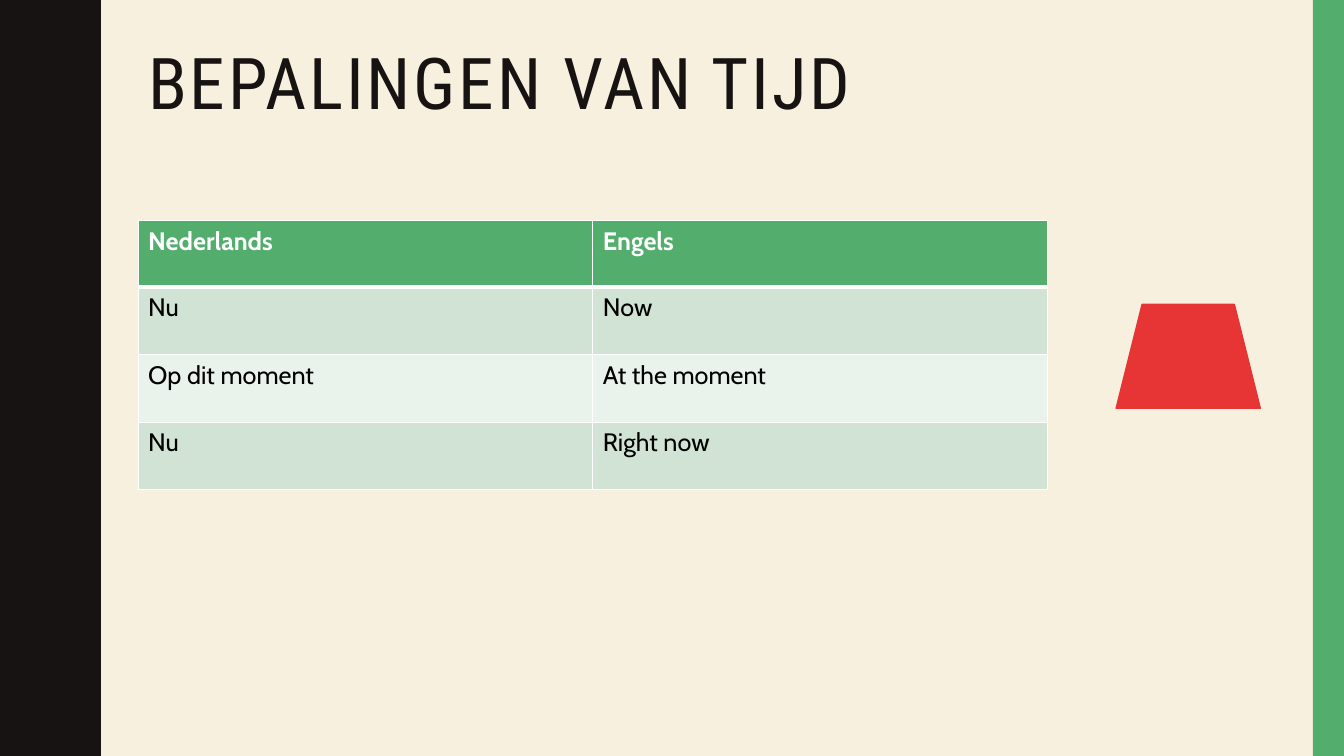
"""Build a slide with a Dutch-English table of time expressions."""
import lxml.etree
import pptx
import pptx.dml.color
import pptx.enum.shapes
import pptx.enum.text
import pptx.oxml.ns
import pptx.util

RGBColor = pptx.dml.color.RGBColor
CREAM = RGBColor(0xF7, 0xF0, 0xDF)
INK = RGBColor(0x17, 0x13, 0x12)
GREEN = RGBColor(0x53, 0xAE, 0x6E)
PALE_GREEN = RGBColor(0xD1, 0xE3, 0xD5)
MIST = RGBColor(0xE9, 0xF2, 0xEB)
RED = RGBColor(0xE7, 0x35, 0x35)
WHITE = RGBColor(0xFF, 0xFF, 0xFF)
BLACK = RGBColor(0, 0, 0)

COLUMNS, ROWS = 13.33, 7.5
UNIT = pptx.util.Inches(1)
WAVE_PERIOD = 1.5
HALF_WAVE = [
    (0.78, 0), (0.78, 0.07), (0.79, 0.14), (0.8, 0.2), (0.81, 0.25),
    (0.83, 0.29), (0.85, 0.33), (0.87, 0.38), (0.89, 0.42), (0.91, 0.46),
    (0.93, 0.5), (0.95, 0.55), (0.96, 0.61), (0.97, 0.68), (0.97, 0.75),
]
WORDS = [
    ("Nederlands", "Engels"),
    ("Nu", "Now"),
    ("Op dit moment", "At the moment"),
    ("Nu", "Right now"),
]
ROW_FILLS = [GREEN, PALE_GREEN, MIST, PALE_GREEN]


def grid(*lengths):
    """Turn grid lengths into slide units."""
    return [round(length * UNIT) for length in lengths]


def write(text_frame, text, *, font, size, color, bold=False, line_spacing=1.0, tracking=0):
    """Write one formatted paragraph."""
    paragraph = text_frame.paragraphs[0]
    paragraph.line_spacing = line_spacing
    paragraph.alignment = pptx.enum.text.PP_ALIGN.LEFT
    run = paragraph.add_run()
    run.text = text
    run.font.name = font
    run.font.size = pptx.util.Pt(size)
    run.font.bold = bold
    run.font.color.rgb = color
    if tracking:
        run.font._element.set("spc", str(tracking * 100))


presentation = pptx.Presentation()
presentation.slide_width, presentation.slide_height = grid(COLUMNS, ROWS)
slide = presentation.slides.add_slide(presentation.slide_layouts[5])
slide.background.fill.solid()
slide.background.fill.fore_color.rgb = CREAM

wave = [(0, 0)]
for period in range(round(ROWS / WAVE_PERIOD)):
    top = period * WAVE_PERIOD
    wave += [(x, top + y) for x, y in HALF_WAVE]
    wave += [(x, top + WAVE_PERIOD - y) for x, y in reversed(HALF_WAVE[:-1])]
wave.append((0, ROWS))
builder = slide.shapes.build_freeform(0, 0, scale=UNIT)
builder.add_line_segments(wave[1:], close=True)
wavy_edge = builder.convert_to_shape()

green_bar = slide.shapes.add_shape(
    pptx.enum.shapes.MSO_SHAPE.RECTANGLE, *grid(COLUMNS - 0.31, 0, 0.31, ROWS))
trapezoid = slide.shapes.add_shape(
    pptx.enum.shapes.MSO_SHAPE.TRAPEZOID, *grid(11.07, 3.02, 1.43, 1.03))
for shape, color in [(wavy_edge, INK), (green_bar, GREEN), (trapezoid, RED)]:
    shape.shadow.inherit = False
    shape.fill.solid()
    shape.fill.fore_color.rgb = color
    shape.line.fill.background()
trapezoid.line.color.rgb = RED
trapezoid.line.width = pptx.util.Pt(1)

title = slide.shapes.title
title.left, title.top, title.width, title.height = grid(1.37, 0.42, 11.13, 1.63)
title.text_frame.word_wrap = True
title.text_frame.auto_size = pptx.enum.text.MSO_AUTO_SIZE.NONE
title.text_frame.vertical_anchor = pptx.enum.text.MSO_ANCHOR.TOP
write(title.text_frame, "BEPALINGEN VAN TIJD", font="Roboto Condensed", size=51,
      color=INK, line_spacing=0.9, tracking=2)

table = slide.shapes.add_table(len(WORDS), 2, *grid(1.37, 2.19, 9.02, 2.69)).table
for row_index, (words, fill) in enumerate(zip(WORDS, ROW_FILLS)):
    is_header = row_index == 0
    table.rows[row_index].height = grid(0.66 if is_header else 0.67)[0]
    for column_index, word in enumerate(words):
        cell = table.cell(row_index, column_index)
        write(cell.text_frame, word, font="Cabin", size=18, bold=is_header,
              color=WHITE if is_header else BLACK)
        properties = cell._tc.get_or_add_tcPr()
        widths = {"L": 1, "R": 1, "T": 3 if row_index == 1 else 1, "B": 3 if is_header else 1}
        for side, width in widths.items():
            border = lxml.etree.SubElement(
                properties, pptx.oxml.ns.qn(f"a:ln{side}"), w=str(pptx.util.Pt(width)))
            border_fill = lxml.etree.SubElement(border, pptx.oxml.ns.qn("a:solidFill"))
            lxml.etree.SubElement(border_fill, pptx.oxml.ns.qn("a:srgbClr"), val=str(WHITE))
        cell.fill.solid()
        cell.fill.fore_color.rgb = fill

presentation.save("out.pptx")
